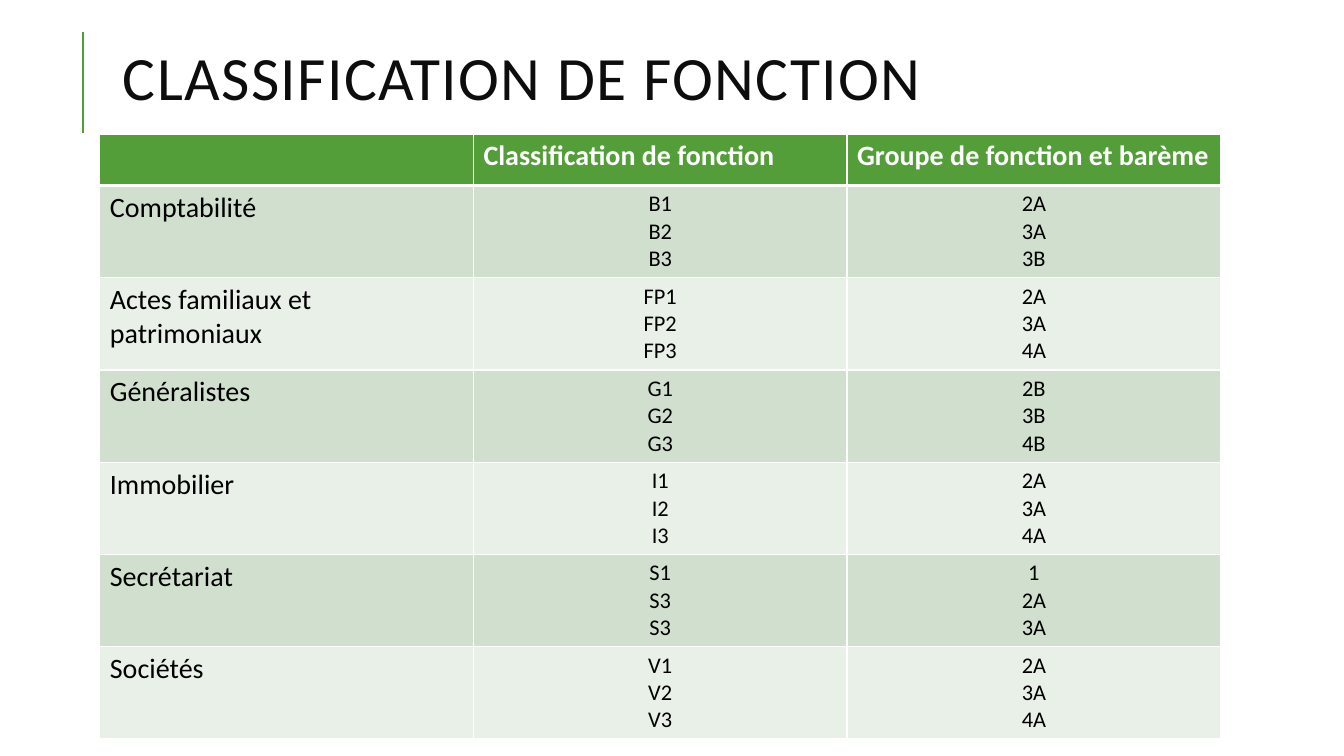
from pptx import Presentation
from pptx.dml.color import RGBColor
from pptx.enum.shapes import MSO_CONNECTOR
from pptx.enum.text import MSO_ANCHOR, MSO_AUTO_SIZE, PP_ALIGN
from pptx.oxml.ns import qn
from pptx.util import Pt
from lxml.etree import SubElement

# Content
TITLE = "CLASSIFICATION DE FONCTION"
HEADERS = ["", "Classification de fonction", "Groupe de fonction et barème"]
DEPARTMENTS = [
    ("Comptabilité", ["B1", "B2", "B3"], ["2A", "3A", "3B"]),
    ("Actes familiaux et patrimoniaux", ["FP1", "FP2", "FP3"], ["2A", "3A", "4A"]),
    ("Généralistes", ["G1", "G2", "G3"], ["2B", "3B", "4B"]),
    ("Immobilier", ["I1", "I2", "I3"], ["2A", "3A", "4A"]),
    ("Secrétariat", ["S1", "S3", "S3"], ["1", "2A", "3A"]),
    ("Sociétés", ["V1", "V2", "V3"], ["2A", "3A", "4A"]),
]

# Style and layout, in points
FONT = "Calibri"
GREEN, WHITE, BLACK, TITLE_COLOR = "549E39", "FFFFFF", "000000", "0D0D0D"
BANDS = ["D1DFCE", "E9F0E8"]
TABLE_LEFT, TABLE_TOP = 71.3, 95.8
COLUMN_WIDTH, HEADER_HEIGHT, ROW_HEIGHT = 266.9, 36.7, 61.9


def color(code):
    return RGBColor.from_string(code)


def add_span(para, text, size, code, bold=False):
    span = para.add_run()
    span.text = text
    span.font.name = FONT
    span.font.size = Pt(size)
    span.font.bold = bold
    span.font.color.rgb = color(code)
    return span


def set_borders(cell, bottom_width):
    properties = cell._tc.get_or_add_tcPr()
    widths = {"a:lnL": 1, "a:lnR": 1, "a:lnT": 1, "a:lnB": bottom_width}
    for side, width in widths.items():
        line = SubElement(properties, qn(side), w=str(Pt(width)))
        fill = SubElement(line, qn("a:solidFill"))
        SubElement(fill, qn("a:srgbClr"), val=WHITE)


def fill_cell(cell, lines, size, code, background, bold=False, align=PP_ALIGN.LEFT, bottom_width=1):
    set_borders(cell, bottom_width)
    cell.fill.solid()
    cell.fill.fore_color.rgb = color(background)
    frame = cell.text_frame
    for index, text in enumerate(lines):
        para = frame.add_paragraph() if index else frame.paragraphs[0]
        para.alignment = align
        if text:
            add_span(para, text, size, code, bold)


deck = Presentation()
deck.slide_width, deck.slide_height = Pt(960), Pt(540)
page = deck.slides.add_slide(deck.slide_layouts[5])

# Accent line beside the title
accent = page.shapes.add_connector(MSO_CONNECTOR.STRAIGHT, Pt(59), Pt(95), Pt(59), Pt(23))
accent.line.color.rgb = color(GREEN)
accent.line.width = Pt(1.5)
SubElement(accent._element.spPr, qn("a:effectLst"))

# Title
title = page.shapes.title
title.left, title.top, title.width, title.height = Pt(80.6), Pt(0), Pt(765.4), Pt(118)
title.text_frame.auto_size = MSO_AUTO_SIZE.NONE
title.text_frame.word_wrap = True
title.text_frame.vertical_anchor = MSO_ANCHOR.MIDDLE
title_para = title.text_frame.paragraphs[0]
title_para.alignment = PP_ALIGN.LEFT
title_para.line_spacing = 0.8
title_span = add_span(title_para, TITLE, 44, TITLE_COLOR)
title_span.font._element.set("spc", "100")

# Table
column_count, row_count = len(HEADERS), len(DEPARTMENTS) + 1
table = page.shapes.add_table(
    row_count, column_count, Pt(TABLE_LEFT), Pt(TABLE_TOP),
    Pt(COLUMN_WIDTH * column_count), Pt(HEADER_HEIGHT + ROW_HEIGHT * len(DEPARTMENTS)),
).table
for column in table.columns:
    column.width = Pt(COLUMN_WIDTH)
for index, row in enumerate(table.rows):
    row.height = Pt(ROW_HEIGHT if index else HEADER_HEIGHT)

# Header row
for index, header in enumerate(HEADERS):
    fill_cell(table.cell(0, index), [header], 20, WHITE, GREEN, bold=True, bottom_width=3)

# Department rows in alternating bands
for index, (department, classes, groups) in enumerate(DEPARTMENTS):
    band = BANDS[index % 2]
    fill_cell(table.cell(index + 1, 0), [department], 20, BLACK, band)
    for column_index, codes in enumerate([classes, groups], start=1):
        fill_cell(table.cell(index + 1, column_index), codes, 16, BLACK, band, align=PP_ALIGN.CENTER)

deck.save("out.pptx")
